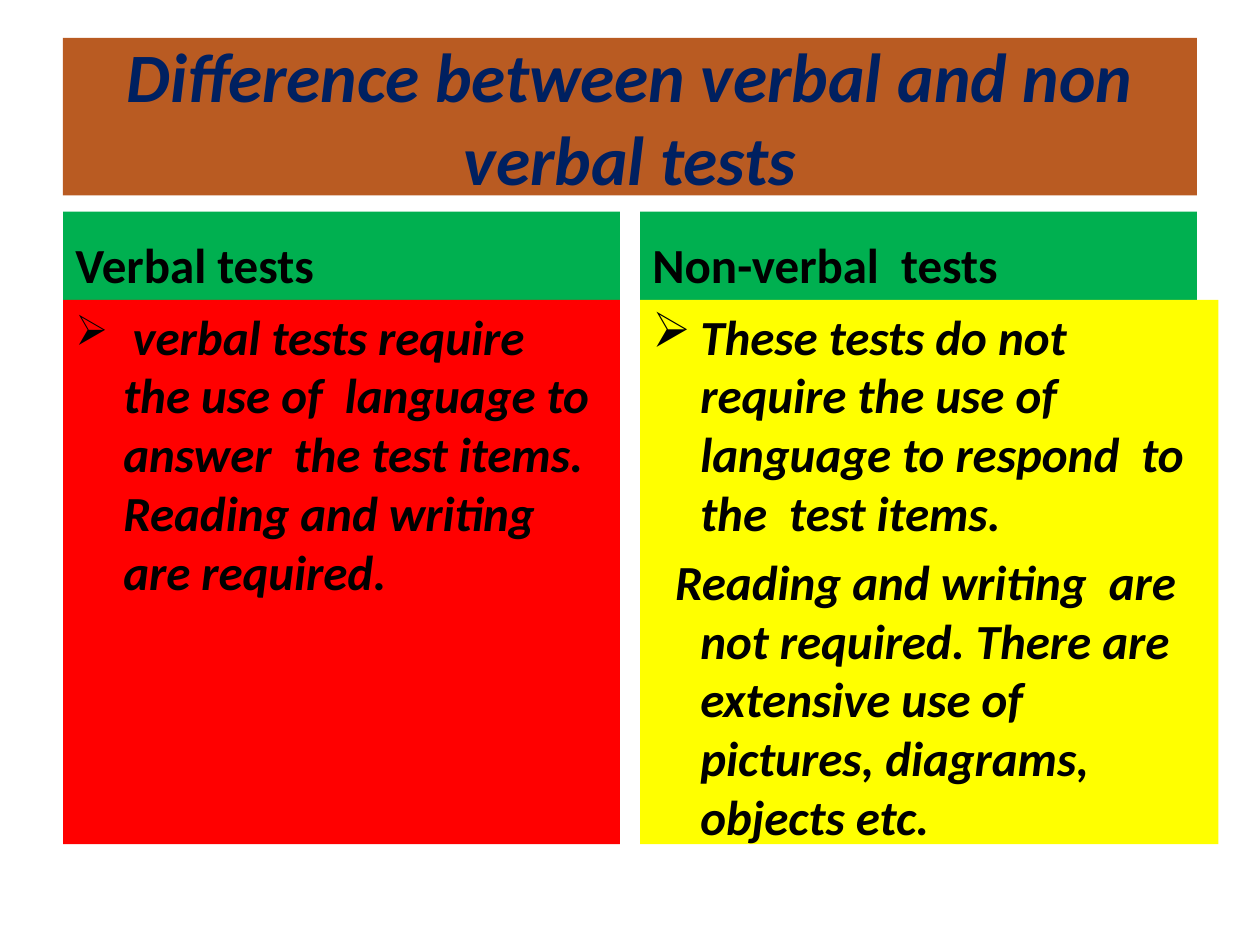
from lxml.etree import SubElement
from pptx import Presentation
from pptx.dml.color import RGBColor as RGB
from pptx.enum.shapes import MSO_SHAPE as Shape
from pptx.enum.text import MSO_ANCHOR as Anchor, PP_ALIGN as Align
from pptx.oxml.ns import qn
from pptx.util import Inches, Pt

TITLE = "Difference between verbal and non verbal tests"
# Each column: heading, body fill, body width, paragraphs.
# Each paragraph: bullet, first-line indent, lead-in space, text.
COLUMNS = [
    ("Verbal tests", "red", 4.42, [
        ("➢", -0.38, " ", "verbal tests require  the use of  language to answer  "
         "the test items. Reading and writing are required."),
    ]),
    ("Non-verbal  tests", "yellow", 4.59, [
        ("➢", -0.38, "", "These tests do not  require the use of language to "
         "respond  to the  test items."),
        ("", -0.2, "", "Reading and writing  are not required. There are "
         "extensive use of pictures, diagrams, objects etc."),
    ]),
]
THEME = {
    "font": "Calibri", "title": 39.6, "text": 28, "lead": 24,
    "brown": "B95B22", "navy": "002060", "green": "00B050",
    "red": "FF0000", "yellow": "FFFF00", "black": "000000",
}
LEFT, STEP, WIDTH, HANG = 0.5, 4.58, 4.42, 0.38
HEAD_TOP, HEAD_HIGH, BODY_HIGH = 1.68, 0.7, 4.32


def add_panel(slide, box, fill, anchor):
    panel = slide.shapes.add_shape(Shape.RECTANGLE, *map(Inches, box))
    panel.shadow.inherit = False
    panel.fill.solid()
    panel.fill.fore_color.rgb = RGB.from_string(THEME[fill])
    panel.line.fill.background()
    frame = panel.text_frame
    frame.word_wrap = True
    frame.vertical_anchor = anchor
    return frame


def add_text(para, text, size="text", color="black", bold=True, italic=False,
             align=Align.LEFT):
    para.alignment = align
    run = para.add_run()
    run.text = text
    font = run.font
    font.name, font.size = THEME["font"], Pt(THEME[size])
    font.bold, font.italic = bold, italic
    font.color.rgb = RGB.from_string(THEME[color])


def set_indent(para, first, bullet):
    """Hang the lines after the first and add a bullet if one is given."""
    props = para._p.get_or_add_pPr()
    props.set("marL", str(Inches(HANG)))
    props.set("indent", str(Inches(first)))
    if bullet:
        SubElement(props, qn("a:buChar"), char=bullet)
    else:
        SubElement(props, qn("a:buNone"))


def add_column(slide, left, head, fill, width, items):
    frame = add_panel(slide, (left, HEAD_TOP, WIDTH, HEAD_HIGH), "green",
                      Anchor.BOTTOM)
    add_text(frame.paragraphs[0], head)

    top = HEAD_TOP + HEAD_HIGH
    frame = add_panel(slide, (left, top, width, BODY_HIGH), fill, Anchor.TOP)
    for i, (bullet, first, lead, text) in enumerate(items):
        para = frame.add_paragraph() if i else frame.paragraphs[0]
        para.space_before = Pt(0.2 * THEME["text"])
        set_indent(para, first, bullet)
        if lead:
            add_text(para, lead, size="lead", bold=False)
        add_text(para, text, italic=True)


def main():
    deck = Presentation()
    deck.slide_width, deck.slide_height = Inches(10), Inches(7.5)
    slide = deck.slides.add_slide(deck.slide_layouts[6])
    frame = add_panel(slide, (LEFT, 0.3, 9, 1.25), "brown", Anchor.MIDDLE)
    add_text(frame.paragraphs[0], TITLE, size="title", color="navy",
             italic=True, align=Align.CENTER)
    for i, column in enumerate(COLUMNS):
        add_column(slide, LEFT + i * STEP, *column)
    deck.save("out.pptx")


if __name__ == "__main__":
    main()
